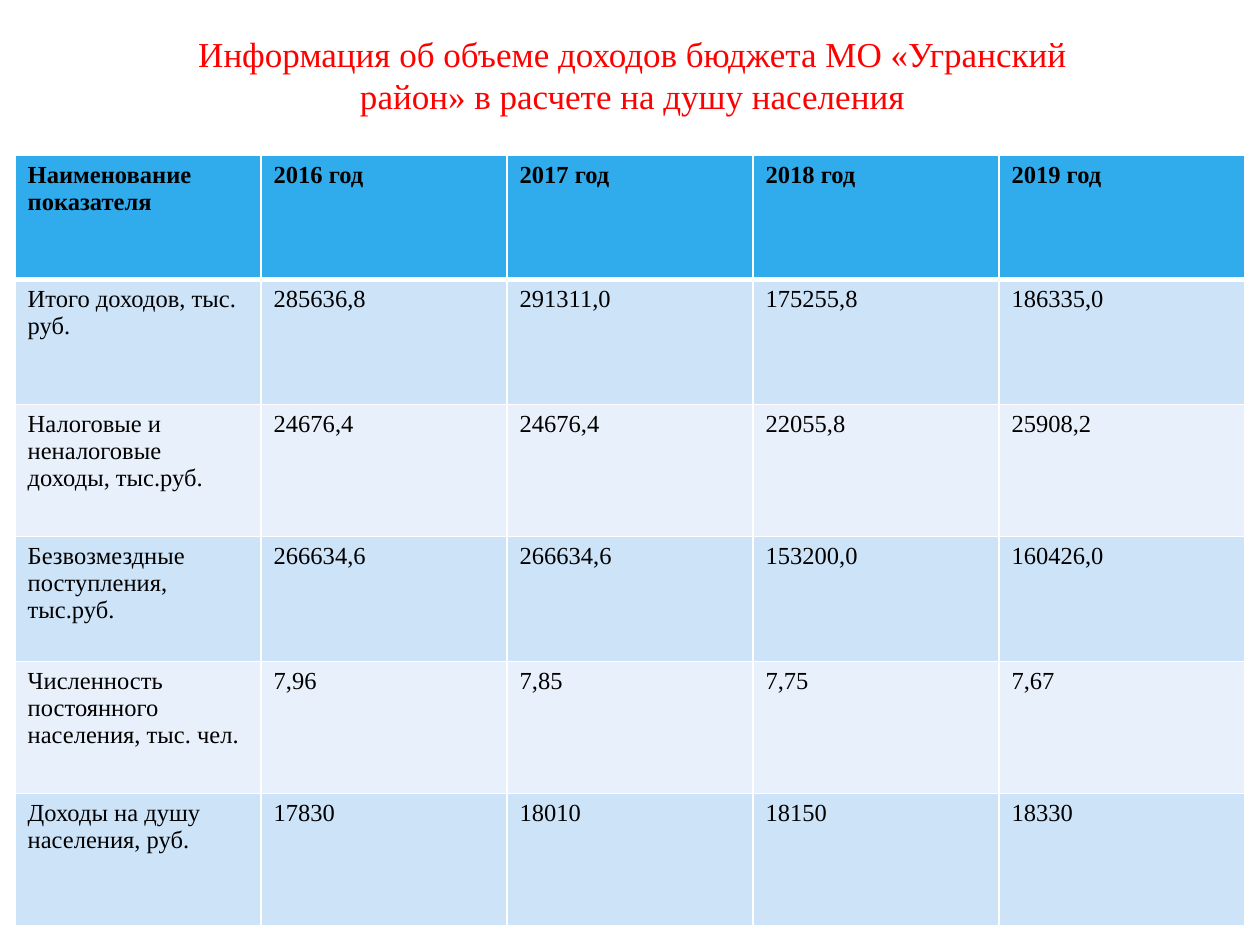
import dataclasses

import lxml.etree
import pptx
import pptx.dml.color
import pptx.enum.text
import pptx.oxml.ns
import pptx.util

Inches = pptx.util.Inches
Pt = pptx.util.Pt


@dataclasses.dataclass(frozen=True)
class Theme:
    font: str = "Times New Roman"
    title_size: float = 20
    table_size: float = 14
    title_color: str = "FF0000"
    text_color: str = "000000"
    header_fill: str = "30ACEC"
    band_fills: tuple = ("CDE3F8", "E8F1FB")
    border_color: str = "FFFFFF"
    border_width: float = 1
    header_border_width: float = 3


class SlideBuilder:
    def __init__(self, slide, theme):
        self.slide = slide
        self.theme = theme

    def style_text(self, text_frame, size, color, bold=False):
        for para in text_frame.paragraphs:
            for span in para.runs:
                span.font.name = self.theme.font
                span.font.size = Pt(size)
                span.font.bold = bold
                span.font.color.rgb = pptx.dml.color.RGBColor.from_string(color)

    def add_title(self, text, left, top, width, height):
        title = self.slide.shapes.title
        title.left, title.top = Inches(left), Inches(top)
        title.width, title.height = Inches(width), Inches(height)
        frame = title.text_frame
        frame.text = text
        frame.word_wrap = True
        frame.auto_size = pptx.enum.text.MSO_AUTO_SIZE.NONE
        frame.vertical_anchor = pptx.enum.text.MSO_ANCHOR.TOP
        frame.paragraphs[0].alignment = pptx.enum.text.PP_ALIGN.CENTER
        self.style_text(frame, self.theme.title_size, self.theme.title_color)

    def add_table(self, rows, left, top, width, row_heights):
        frame = self.slide.shapes.add_table(
            len(rows), len(rows[0]), Inches(left), Inches(top),
            Inches(width), Inches(sum(row_heights)))
        table = frame.table
        for column in table.columns:
            column.width = Inches(width / len(rows[0]))
        for row_index, values in enumerate(rows):
            table.rows[row_index].height = Inches(row_heights[row_index])
            for column_index, value in enumerate(values):
                cell = table.cell(row_index, column_index)
                cell.text = value
                self.style_cell(cell, row_index)

    def style_cell(self, cell, row_index):
        theme = self.theme
        is_header = row_index == 0
        fill = theme.header_fill if is_header else theme.band_fills[(row_index - 1) % 2]
        self.style_text(cell.text_frame, theme.table_size, theme.text_color, is_header)
        top = theme.header_border_width if row_index == 1 else theme.border_width
        bottom = theme.header_border_width if is_header else theme.border_width
        self.add_border(cell, "a:lnL", theme.border_width)
        self.add_border(cell, "a:lnR", theme.border_width)
        self.add_border(cell, "a:lnT", top)
        self.add_border(cell, "a:lnB", bottom)
        cell.fill.solid()
        cell.fill.fore_color.rgb = pptx.dml.color.RGBColor.from_string(fill)

    def add_border(self, cell, tag, width):
        qn = pptx.oxml.ns.qn
        properties = cell._tc.get_or_add_tcPr()
        line = lxml.etree.SubElement(properties, qn(tag), w=str(Pt(width)))
        fill = lxml.etree.SubElement(line, qn("a:solidFill"))
        lxml.etree.SubElement(fill, qn("a:srgbClr"), val=self.theme.border_color)


INCOME_ROWS = [
    ("Наименование показателя", "2016 год", "2017 год", "2018 год", "2019 год"),
    ("Итого доходов, тыс. руб.", "285636,8", "291311,0", "175255,8", "186335,0"),
    ("Налоговые и неналоговые доходы, тыс.руб.", "24676,4", "24676,4", "22055,8", "25908,2"),
    ("Безвозмездные поступления, тыс.руб.", "266634,6", "266634,6", "153200,0", "160426,0"),
    ("Численность постоянного населения, тыс. чел.", "7,96", "7,85", "7,75", "7,67"),
    ("Доходы на душу населения, руб.", "17830", "18010", "18150", "18330"),
]


def main():
    deck = pptx.Presentation()
    deck.slide_width, deck.slide_height = Inches(10), Inches(7.5)
    title_only = deck.slide_layouts[5]
    page = SlideBuilder(deck.slides.add_slide(title_only), Theme())
    page.add_title(
        "Информация об объеме доходов бюджета МО «Угранский район» "
        "в расчете на душу населения", 1.36, 0.21, 7.32, 0.77)
    page.add_table(INCOME_ROWS, 0.12, 1.23, 9.76, (0.99, 0.99, 1.05, 0.99, 1.05, 1.05))
    deck.save("out.pptx")


if __name__ == "__main__":
    main()
